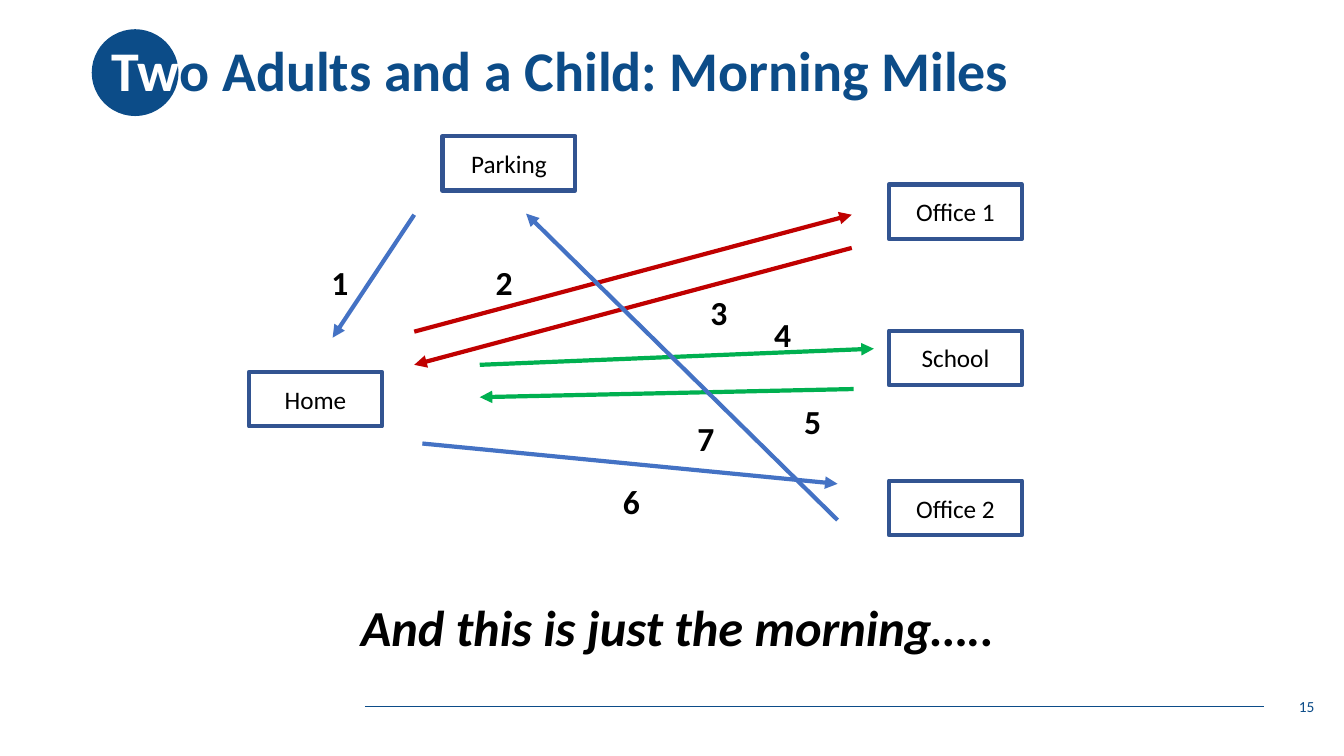
from lxml import etree
from pptx import Presentation
from pptx.dml.color import RGBColor
from pptx.enum.shapes import MSO_CONNECTOR as Connector, MSO_SHAPE as Shape
from pptx.enum.text import MSO_ANCHOR as Anchor, MSO_AUTO_SIZE as AutoSize, PP_ALIGN as Align
from pptx.oxml.ns import qn
from pptx.util import Pt

FONT = "Calibri"
NAVY, BORDER, BLACK, WHITE = "0C4C88", "325491", "000000", "FFFFFF"
BLUE, RED, GREEN = "4472C4", "C00000", "00B050"
OFFICE_COLUMN = 635

PLACES = [
    ("Parking", 316, 97.2),
    ("Home", 177.8, 265.7),
    ("Office 1", OFFICE_COLUMN, 131.8),
    ("School", OFFICE_COLUMN, 236.2),
    ("Office 2", OFFICE_COLUMN, 343.4),
]

TRIPS = [
    (BLUE, (295.9, 153.4), (237.6, 241.2), (229.7, 183.6)),
    (RED, (295.9, 236.9), (608.4, 153.4), (347, 183.6)),
    (RED, (608.4, 177.1), (295.9, 260.6), (500.4, 205.2)),
    (GREEN, (342.7, 260.6), (624.2, 249.1), (545.8, 221)),
    (GREEN, (609.8, 277.9), (342.7, 283.7), (567.4, 283)),
    (BLUE, (301.7, 316.8), (598.3, 345.6), (437.8, 339.8)),
    (BLUE, (598.3, 371.5), (375.8, 152.6), (491, 295.2)),
]


def color(value):
    return RGBColor.from_string(value)


def format_span(span, size, tint, bold=False, italic=False):
    font = span.font
    font.name, font.size = FONT, Pt(size)
    font.bold, font.italic = bold, italic
    font.color.rgb = color(tint)


def add_text(slide, text, left, top, width, height, size, tint=BLACK,
             bold=False, italic=False, align=Align.LEFT, anchor=Anchor.TOP):
    box = slide.shapes.add_textbox(Pt(left), Pt(top), Pt(width), Pt(height))
    frame = box.text_frame
    frame.text = text
    frame.word_wrap = False
    frame.vertical_anchor = anchor
    para = frame.paragraphs[0]
    para.alignment = align
    format_span(para.runs[0], size, tint, bold, italic)


def add_line(slide, start, end, tint, width, arrow=False):
    points = [Pt(value) for value in (*start, *end)]
    line = slide.shapes.add_connector(Connector.STRAIGHT, *points)
    line.line.color.rgb = color(tint)
    line.line.width = Pt(width)
    if arrow:
        outline = line.line._get_or_add_ln()
        etree.SubElement(outline, qn("a:tailEnd"), type="triangle")
    etree.SubElement(line._element.spPr, qn("a:effectLst"))


def add_place(slide, name, left, top):
    box = slide.shapes.add_shape(Shape.RECTANGLE, Pt(left), Pt(top), Pt(95), Pt(38.9))
    box.shadow.inherit = False
    box.fill.background()
    box.line.color.rgb = color(BORDER)
    box.line.width = Pt(3)
    frame = box.text_frame
    frame.text = name
    frame.word_wrap = False
    frame.vertical_anchor = Anchor.MIDDLE
    para = frame.paragraphs[0]
    para.alignment = Align.CENTER
    format_span(para.runs[0], 18, BLACK)


def add_title(slide, light_part, dark_part):
    circle = slide.shapes.add_shape(Shape.OVAL, Pt(65.5), Pt(20.9), Pt(62), Pt(62))
    circle.shadow.inherit = False
    circle.fill.solid()
    circle.fill.fore_color.rgb = color(NAVY)
    circle.line.fill.background()

    title = slide.shapes.title
    circle._element.addnext(title._element)
    title.left, title.top, title.width, title.height = Pt(72.7), Pt(0), Pt(828), Pt(104.4)
    frame = title.text_frame
    frame.auto_size = AutoSize.NONE
    frame.vertical_anchor = Anchor.MIDDLE
    para = frame.paragraphs[0]
    para.alignment = Align.LEFT
    para.line_spacing = 0.9
    for text, tint in ((light_part, WHITE), (dark_part, NAVY)):
        span = para.add_run()
        span.text = text
        format_span(span, 40, tint, bold=True)


def main():
    deck = Presentation()
    deck.slide_width, deck.slide_height = Pt(960), Pt(540)
    slide = deck.slides.add_slide(deck.slide_layouts[5])

    add_line(slide, (260.6, 504.7), (902.9, 504.7), NAVY, 0.5)
    add_title(slide, "Tw", "o Adults and a Child: Morning Miles")
    add_text(slide, "15", 730, 490.3, 216, 28.8, 11, NAVY,
             align=Align.RIGHT, anchor=Anchor.MIDDLE)
    for name, left, top in PLACES:
        add_place(slide, name, left, top)
    for tint, start, end, _ in TRIPS:
        add_line(slide, start, end, tint, 3, arrow=True)
    add_text(slide, "And this is just the morning…..", 250.6, 422.6, 474.5, 51, 36,
             bold=True, italic=True)
    for number, (_, _, _, (left, top)) in enumerate(TRIPS, 1):
        add_text(slide, str(number), left, top, 26.6, 36, 24, bold=True)

    deck.save("out.pptx")


if __name__ == "__main__":
    main()
